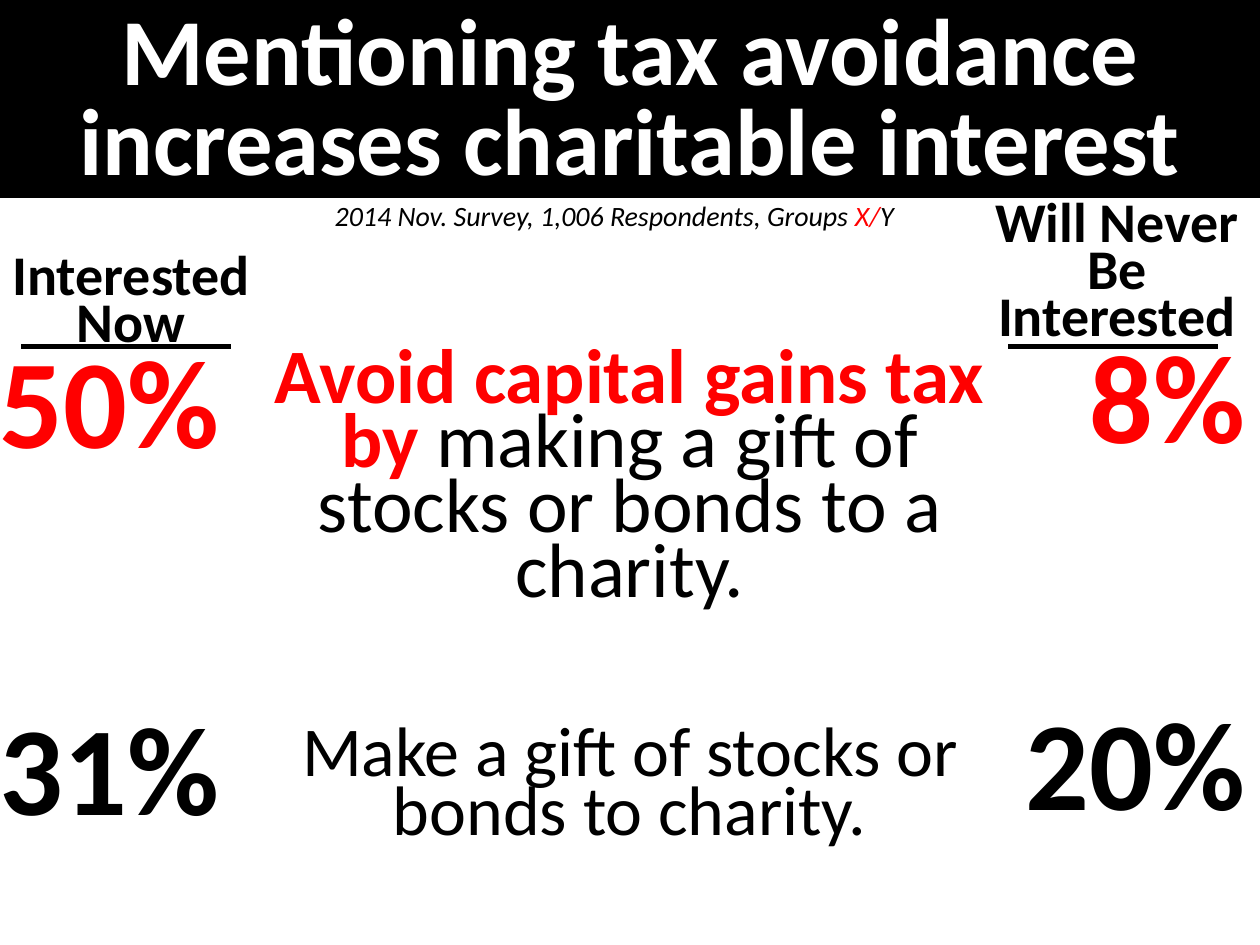
from dataclasses import dataclass

from lxml import etree
from pptx import Presentation
from pptx.dml.color import RGBColor
from pptx.enum.shapes import MSO_CONNECTOR
from pptx.enum.text import MSO_ANCHOR, MSO_AUTO_SIZE, PP_ALIGN
from pptx.oxml.ns import qn
from pptx.util import Inches, Pt

LEFT, CENTER, RIGHT = PP_ALIGN.LEFT, PP_ALIGN.CENTER, PP_ALIGN.RIGHT
TOP = MSO_ANCHOR.TOP
NO_FIT = MSO_AUTO_SIZE.NONE
STRAIGHT = MSO_CONNECTOR.STRAIGHT

FONT = "Calibri"
COLORS = {"ink": "000000", "paper": "FFFFFF", "accent": "FF0000"}
PERCENT_GAP = 140.6
MESSAGE_GAP = 68.4


@dataclass
class Span:
    text: str
    size: float
    color: str = "ink"
    bold: bool = False
    italic: bool = False


@dataclass
class Para:
    spans: list[Span]
    align: PP_ALIGN = CENTER
    line_spacing: float = 0.7
    space_before: float = 0


@dataclass
class Column:
    box: tuple[float, float, float, float]
    margins: tuple[float, float, float, float]
    heading: str
    percents: tuple[str, str]
    align: PP_ALIGN
    rule: tuple[float, float]


def color_of(name: str) -> RGBColor:
    return RGBColor.from_string(COLORS[name])


def place(shape, box: tuple) -> None:
    shape.left, shape.top, shape.width, shape.height = map(Inches, box)


def write(shape, paras: list[Para], margins: tuple) -> None:
    frame = shape.text_frame
    frame.word_wrap = True
    frame.auto_size = NO_FIT
    frame.vertical_anchor = TOP
    (frame.margin_left, frame.margin_top,
     frame.margin_right, frame.margin_bottom) = map(Inches, margins)
    for index, para in enumerate(paras):
        paragraph = frame.add_paragraph() if index else frame.paragraphs[0]
        paragraph.alignment = para.align
        paragraph.line_spacing = para.line_spacing
        paragraph.space_before = Pt(para.space_before)
        for span in para.spans:
            run = paragraph.add_run()
            run.text = span.text
            font = run.font
            font.name, font.size = FONT, Pt(span.size)
            font.bold, font.italic = span.bold, span.italic
            font.color.rgb = color_of(span.color)


def add_text(page, box: tuple, paras: list[Para], margins: tuple) -> None:
    write(page.shapes.add_textbox(*map(Inches, box)), paras, margins)


def add_rule(page, start: float, end: float, top: float) -> None:
    rule = page.shapes.add_connector(
        STRAIGHT, Inches(start), Inches(top), Inches(end), Inches(top))
    rule.line.color.rgb = color_of("ink")
    rule.line.width = Pt(3)
    etree.SubElement(rule._element.spPr, qn("a:effectLst"))


def add_column(page, column: Column) -> None:
    first, second = column.percents
    paras = [
        Para([Span(column.heading, 32, bold=True)]),
        Para([Span(first, 72, "accent", bold=True)], column.align, 0.8),
        Para([Span(second, 72, bold=True)], column.align, 0.8, PERCENT_GAP),
    ]
    add_text(page, column.box, paras, column.margins)
    add_rule(page, *column.rule, 2.75)


def add_title(page) -> None:
    title = page.shapes.title
    place(title, (0, 0, 10, 1.57))
    title.fill.solid()
    title.fill.fore_color.rgb = color_of("ink")
    text = "Mentioning tax avoidance increases charitable interest"
    write(title, [Para([Span(text, 54, "paper", bold=True)], line_spacing=0.8)],
          (0.1, 0.1, 0.1, 0))


def main() -> None:
    deck = Presentation()
    deck.slide_width, deck.slide_height = Inches(10), Inches(7.5)
    page = deck.slides.add_slide(deck.slide_layouts[5])
    add_title(page)

    columns = [
        Column((0, 2, 2.08, 5.62 - 0.12), (0, 0.05, 0, 0.05), "Interested Now",
               ("50%", "31%"), LEFT, (0.17, 1.83)),
        Column((7.75, 1.58, 2.23, 5.92), (0.1, 0.05, 0.1, 0.05),
               "Will Never Be Interested", ("8%", "20%"), RIGHT, (8, 9.67)),
    ]
    for column in columns:
        add_column(page, column)

    add_text(page, (2.25, 1.55, 5.25, 0.45), [Para([
        Span("2014 Nov. Survey, 1,006 Respondents, Groups ", 16, italic=True),
        Span("X/", 16, "accent", italic=True),
        Span("Y", 16, italic=True),
    ])], (0.1, 0.1, 0.1, 0.1))

    add_text(page, (2, 2.74, 6, 4.53), [
        Para([
            Span("Avoid capital gains tax by ", 44, "accent", bold=True),
            Span("making a gift of stocks or bonds to a charity.", 44),
        ]),
        Para([Span("Make a gift of stocks or bonds to charity.", 40)],
             space_before=MESSAGE_GAP),
    ], (0.1, 0.05, 0.1, 0.05))

    deck.save("out.pptx")


if __name__ == "__main__":
    main()
